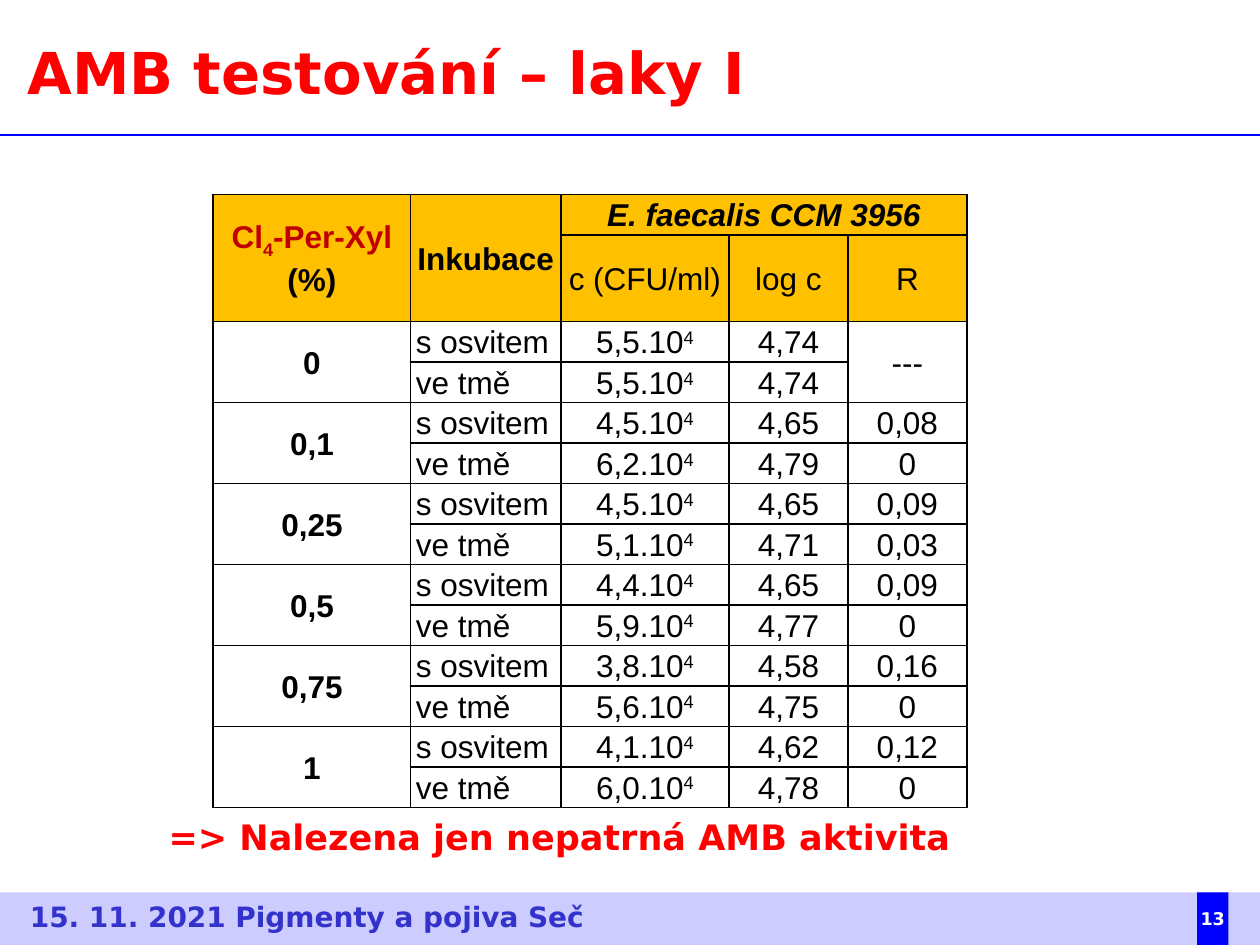
from lxml import etree
from pptx import Presentation
from pptx.dml.color import RGBColor
from pptx.enum.shapes import MSO_CONNECTOR, MSO_SHAPE
from pptx.enum.text import MSO_ANCHOR, MSO_AUTO_SIZE, PP_ALIGN
from pptx.oxml.ns import qn
from pptx.util import Pt

LEFT, MID = PP_ALIGN.LEFT, PP_ALIGN.CENTER
TOP, CORE = MSO_ANCHOR.TOP, MSO_ANCHOR.MIDDLE
GROW = MSO_AUTO_SIZE.SHAPE_TO_FIT_TEXT
RECT, LINE = MSO_SHAPE.RECTANGLE, MSO_CONNECTOR.STRAIGHT
RED, BLUE, BLACK, GOLD = "FF0000", "0000FF", "000000", "FFC000"


def tint(code):
    return RGBColor.from_string(code)


def put(frame, runs, form, align=LEFT, gap=None):
    """Write (text, colour, baseline) runs into the first paragraph."""
    para = frame.paragraphs[0]
    para.alignment = align
    para.line_spacing = gap
    for text, code, base in runs:
        run = para.add_run()
        run.text = text
        run.font.color.rgb = tint(code)
        for key, value in form.items():
            setattr(run.font, key, value)
        if base:
            run._r.get_or_add_rPr().set("baseline", str(base * 1000))


deck = Presentation()
deck.slide_width, deck.slide_height = Pt(720), Pt(540)
slide = deck.slides.add_slide(deck.slide_layouts[5])
shapes = slide.shapes

# Footer band and page number
for left, width, code, text in ((0, 720, "CCCCFF", ""), (684, 18, BLUE, "13")):
    bar = shapes.add_shape(RECT, Pt(left), Pt(510), Pt(width), Pt(30))
    bar.shadow.inherit = False
    bar.fill.solid()
    bar.fill.fore_color.rgb = tint(code)
    bar.line.fill.background()
    if text:
        bar.text_frame.word_wrap = False
        form = dict(name="DejaVu Sans", size=Pt(10), bold=True)
        put(bar.text_frame, [(text, "FFFFFF", 0)], form, MID)

# Rule under the title
rule = shapes.add_connector(LINE, Pt(0), Pt(77), Pt(720), Pt(77))
rule.line.color.rgb = tint(BLUE)
rule.line.width = Pt(1)
etree.SubElement(rule._element.spPr, qn("a:effectLst"))

# Title, footer and conclusion
title = shapes.title
foot = shapes.add_textbox(0, 0, 0, 0)
note = shapes.add_textbox(0, 0, 0, 0)
texts = (
    (title, (8.6, 20.2, 436.3, 45.4), "AMB testování – laky I", 33, RED, 0.95, False),
    (foot, (10, 512.6, 335.5, 24.5), "15. 11. 2021 Pigmenty a pojiva Seč",
     16, "3333CC", 0.9, False),
    (note, (89.3, 465.8, 496, 28.8), "=> Nalezena jen nepatrná AMB aktivita",
     20, RED, 0.87, True),
)
for box, area, text, size, code, gap, wrap in texts:
    box.left, box.top, box.width, box.height = map(Pt, area)
    frame = box.text_frame
    frame.word_wrap = wrap
    frame.auto_size = GROW
    frame.vertical_anchor = TOP
    form = dict(name="DejaVu Sans", size=Pt(size), bold=True)
    put(frame, [(text, code, 0)], form, LEFT, gap)

# Table contents: dose, then c (x 10^4), log c and R in light and in dark
doses = (
    ("0", ("5,5", "4,74", "---"), ("5,5", "4,74", "")),
    ("0,1", ("4,5", "4,65", "0,08"), ("6,2", "4,79", "0")),
    ("0,25", ("4,5", "4,65", "0,09"), ("5,1", "4,71", "0,03")),
    ("0,5", ("4,4", "4,65", "0,09"), ("5,9", "4,77", "0")),
    ("0,75", ("3,8", "4,58", "0,16"), ("5,6", "4,75", "0")),
    ("1", ("4,1", "4,62", "0,12"), ("6,0", "4,78", "0")),
)
rows = [
    ["", "Inkubace", "E. faecalis CCM 3956", "", ""],
    ["", "", "c (CFU/ml)", "log c", "R"],
]
for dose, light, dark in doses:
    rows.append([dose, "s osvitem", *light])
    rows.append(["", "ve tmě", *dark])

# Table grid
wide = (112.9, 85.8, 96.1, 68, 68)
high = [23.4, 49] + [23.14] * 12
grid = shapes.add_table(len(rows), len(wide), Pt(121.8), Pt(111),
                        Pt(sum(wide)), Pt(sum(high))).table
grid.first_row = grid.horz_banding = False
for col, width in zip(grid.columns, wide):
    col.width = Pt(width)
for row, height in zip(grid.rows, high):
    row.height = Pt(height)

# Merged cells
grid.cell(0, 1).merge(grid.cell(1, 1))
grid.cell(0, 2).merge(grid.cell(0, 4))
grid.cell(2, 4).merge(grid.cell(3, 4))
for top in range(0, len(rows), 2):
    grid.cell(top, 0).merge(grid.cell(top + 1, 0))

# Table cells
inset = dict(margin_left=Pt(3), margin_right=Pt(3), margin_top=0,
             margin_bottom=0, vertical_anchor=CORE)
for r, row in enumerate(rows):
    for c, text in enumerate(row):
        cell = grid.cell(r, c)
        for key, value in inset.items():
            setattr(cell, key, value)
        for side in ("lnL", "lnR", "lnT", "lnB"):
            edge = etree.SubElement(cell._tc.get_or_add_tcPr(), qn("a:" + side),
                                    w=str(Pt(1)))
            paint = etree.SubElement(edge, qn("a:solidFill"))
            etree.SubElement(paint, qn("a:srgbClr"), val=BLACK)
        cell.fill.solid()
        cell.fill.fore_color.rgb = tint(GOLD if r < 2 else "FFFFFF")

        runs = [(text, BLACK, 0)] if text else []
        if r == c == 0:
            runs = [("Cl", "C00000", 0), ("4", "C00000", -25),
                    ("-Per-Xyl", "C00000", 0), (" (%)", BLACK, 0)]
        elif r > 1 and c == 2:
            runs = [(text + ".10", BLACK, 0), ("4", BLACK, 30)]
        form = dict(name="Arial", size=Pt(18), bold=r == 0 or c == 0,
                    italic=r == 0 and c == 2)
        align = LEFT if r > 1 and c == 1 else MID
        put(cell.text_frame, runs, form, align, 1.07)

deck.save("out.pptx")
